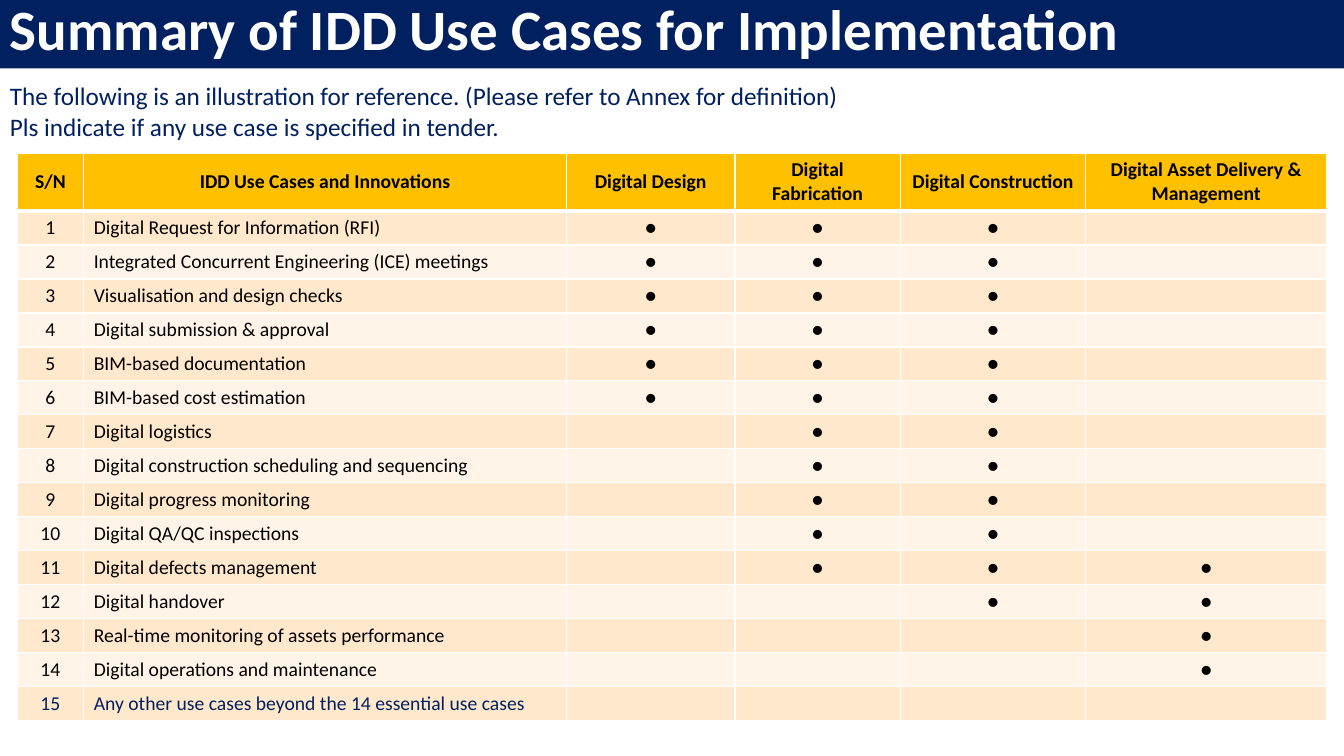
import pptx
import pptx.util
import pptx.dml.color
import pptx.enum.shapes
import pptx.enum.text
import pptx.oxml
import pptx.oxml.ns
import lxml.etree

Inches = pptx.util.Inches
Pt = pptx.util.Pt
RGBColor = pptx.dml.color.RGBColor
PP_ALIGN = pptx.enum.text.PP_ALIGN
MSO_ANCHOR = pptx.enum.text.MSO_ANCHOR
qn = pptx.oxml.ns.qn

FONT = "Calibri"
NAVY = RGBColor(0x00, 0x20, 0x60)
GOLD = RGBColor(0xFF, 0xC0, 0x00)
PEACH = RGBColor(0xFF, 0xE8, 0xCC)
CREAM = RGBColor(0xFF, 0xF4, 0xE7)
BLACK = RGBColor(0x00, 0x00, 0x00)
WHITE = RGBColor(0xFF, 0xFF, 0xFF)

TABLE_SIZE = 14
COLUMN_WIDTHS = [0.66, 4.79, 1.67, 1.64, 1.84, 2.39]
HEADER_HEIGHT, ROW_HEIGHT = 0.57, 0.33
HEADERS = ["S/N", "IDD Use Cases and Innovations", "Digital Design",
           "Digital Fabrication", "Digital Construction",
           "Digital Asset Delivery & Management"]

# Phases that use each case: D design, F fabrication, C construction, A asset
PHASES = "DFCA"
USE_CASES = [
    ("Digital Request for Information (RFI)", "DFC"),
    ("Integrated Concurrent Engineering (ICE) meetings", "DFC"),
    ("Visualisation and design checks", "DFC"),
    ("Digital submission & approval", "DFC"),
    ("BIM-based documentation", "DFC"),
    ("BIM-based cost estimation", "DFC"),
    ("Digital logistics", "FC"),
    ("Digital construction scheduling and sequencing", "FC"),
    ("Digital progress monitoring", "FC"),
    ("Digital QA/QC inspections", "FC"),
    ("Digital defects management", "FCA"),
    ("Digital handover", "CA"),
    ("Real-time monitoring of assets performance", "A"),
    ("Digital operations and maintenance", "A"),
    ("Any other use cases beyond the 14 essential use cases", ""),
]


def format_runs(text_frame, size, color, bold=False):
    for paragraph in text_frame.paragraphs:
        for run in paragraph.runs:
            run.font.name = FONT
            run.font.size = Pt(size)
            run.font.bold = bold
            run.font.color.rgb = color


def add_title(slide, text):
    banner = slide.shapes.add_shape(pptx.enum.shapes.MSO_SHAPE.RECTANGLE,
                                    0, 0, Inches(13.33), Inches(0.68))
    banner.shadow.inherit = False
    banner.fill.solid()
    banner.fill.fore_color.rgb = NAVY
    banner.line.fill.background()
    text_frame = banner.text_frame
    text_frame.text = text
    text_frame.vertical_anchor = MSO_ANCHOR.MIDDLE
    text_frame.paragraphs[0].alignment = PP_ALIGN.LEFT
    text_frame.paragraphs[0].line_spacing = 0.8
    format_runs(text_frame, 40.7, WHITE, bold=True)


def add_note(slide, text):
    box = slide.shapes.add_textbox(0, Inches(0.75), Inches(11.89), Inches(0.71))
    box.text_frame.word_wrap = True
    box.text_frame.text = text
    format_runs(box.text_frame, 18, NAVY)


def set_borders(cell, top, bottom):
    properties = cell._tc.get_or_add_tcPr()
    for side, points in (("L", 1), ("R", 1), ("T", top), ("B", bottom)):
        line = lxml.etree.SubElement(properties, qn("a:ln" + side), w=str(Pt(points)))
        fill = lxml.etree.SubElement(line, qn("a:solidFill"))
        lxml.etree.SubElement(fill, qn("a:srgbClr"), val=str(WHITE))


def fill_cell(cell, text, fill, color, alignment, bold=False):
    cell.fill.solid()
    cell.fill.fore_color.rgb = fill
    cell.vertical_anchor = MSO_ANCHOR.MIDDLE
    cell.text_frame.text = text
    paragraph = cell.text_frame.paragraphs[0]
    paragraph.alignment = alignment
    format_runs(cell.text_frame, TABLE_SIZE, color, bold)
    if not text:
        # An empty cell keeps the table's text size, so its row stays low
        lxml.etree.SubElement(paragraph._p, qn("a:endParaRPr"), sz=str(TABLE_SIZE * 100))


def add_use_case_table(slide):
    rows = [HEADERS]
    for number, (name, phases) in enumerate(USE_CASES, start=1):
        marks = ["●" if phase in phases else "" for phase in PHASES]
        rows.append([str(number), name] + marks)

    height = HEADER_HEIGHT + ROW_HEIGHT * len(USE_CASES)
    table = slide.shapes.add_table(len(rows), len(HEADERS), Inches(0.17), Inches(1.52),
                                   Inches(sum(COLUMN_WIDTHS)), Inches(height)).table
    for column, width in zip(table.columns, COLUMN_WIDTHS):
        column.width = Inches(width)

    for row_index, texts in enumerate(rows):
        is_header = row_index == 0
        table.rows[row_index].height = Inches(HEADER_HEIGHT if is_header else ROW_HEIGHT)
        fill = GOLD if is_header else (PEACH if row_index % 2 else CREAM)
        color = NAVY if row_index == len(USE_CASES) else BLACK
        for column_index, text in enumerate(texts):
            cell = table.cell(row_index, column_index)
            is_name = column_index == 1 and not is_header
            set_borders(cell, top=3 if row_index == 1 else 1, bottom=3 if is_header else 1)
            fill_cell(cell, text, fill, color,
                      PP_ALIGN.LEFT if is_name else PP_ALIGN.CENTER, bold=is_header)


def main():
    presentation = pptx.Presentation()
    presentation.slide_width = Inches(13.33)
    presentation.slide_height = Inches(7.5)
    slide = presentation.slides.add_slide(presentation.slide_layouts[6])

    add_use_case_table(slide)
    add_note(slide, "The following is an illustration for reference. "
                    "(Please refer to Annex for definition)\n"
                    "Pls indicate if any use case is specified in tender.")
    add_title(slide, "Summary of IDD Use Cases for Implementation")

    presentation.save("out.pptx")


if __name__ == "__main__":
    main()
